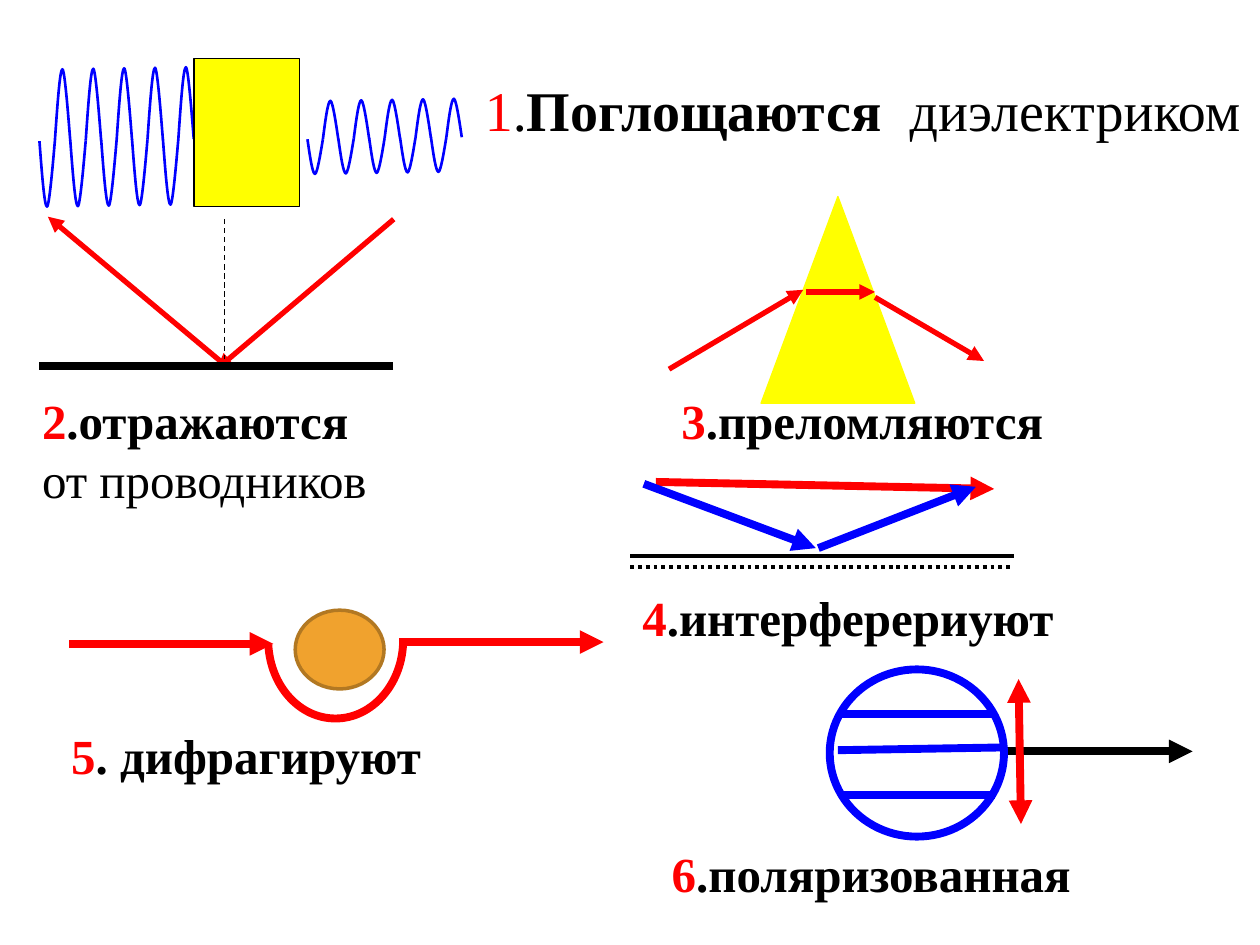
from dataclasses import dataclass

from lxml import etree
from pptx import Presentation
from pptx import util as u
from pptx.dml.color import RGBColor
from pptx.enum import dml, shapes, text
from pptx.oxml.ns import qn

# The slide is a grid of 100 columns by 75 rows; all places are (column, row).
COLUMNS, ROWS = 100, 75
WIDTH, HEIGHT = u.Inches(10), u.Inches(7.5)

RED = RGBColor(0xFF, 0x00, 0x00)
BLUE = RGBColor(0x00, 0x00, 0xFF)
BLACK = RGBColor(0x00, 0x00, 0x00)
YELLOW = RGBColor(0xFF, 0xFF, 0x00)
ORANGE = RGBColor(0xF0, 0xA2, 0x2E)
BROWN = RGBColor(0xB2, 0x78, 0x22)
FONT = "Times New Roman"

Point = tuple[float, float]


@dataclass(frozen=True)
class Ray:
    start: Point
    end: Point
    color: RGBColor = RED
    weight: float = 4.5
    arrows: tuple[str, ...] = ()
    dash: dml.MSO_LINE | None = None


@dataclass(frozen=True)
class Body:
    kind: shapes.MSO_SHAPE
    corner: Point
    size: Point
    fill: RGBColor | None
    outline: RGBColor
    weight: float


@dataclass(frozen=True)
class Caption:
    number: str
    lines: tuple[tuple[tuple[str, bool], ...], ...]
    corner: Point
    size: Point
    points: int = 28
    bold_number: bool = True


@dataclass(frozen=True)
class Wave:
    start: Point
    crest: float
    trough: float
    periods: int = 5


HEAD, TAIL = ("headEnd",), ("tailEnd",)

WAVES = [Wave((3.13, 11.2), 5.7, 5.2), Wave((24.4, 11.05), 3.05, 2.75)]
PERIOD, DRIFT = 2.45, -0.04
ABSORBER = Body(shapes.MSO_SHAPE.RECTANGLE, (15.4, 4.67), (8.35, 11.7), YELLOW, BLACK, 0.75)
REFLECTION = [
    Ray((31.25, 17.4), (17.2, 29.3), weight=3, arrows=TAIL),
    Ray((17.8, 17.4), (17.8, 28.5), BLACK, 0.75, dash=dml.MSO_LINE.DASH),
    Ray((3.8, 17.2), (17.9, 29), weight=3, arrows=HEAD),
    Ray((31.2, 29.04), (3.13, 29.04), BLACK),
]
PRISM = Body(shapes.MSO_SHAPE.ISOSCELES_TRIANGLE, (60.4, 15.6), (12.2, 16.4),
             YELLOW, YELLOW, 0.75)
REFRACTION = [
    Ray((53.1, 29.3), (63.75, 23), weight=3, arrows=TAIL),
    Ray((63.94, 23.17), (69.45, 23.17), weight=3, arrows=TAIL),
    Ray((69.45, 23.6), (78.1, 28.65), weight=3, arrows=TAIL),
]
DIRECT_RAY = Ray((52.05, 38.25), (78.9, 38.8), arrows=TAIL)
REFLECTED_RAYS = [
    Ray((51.1, 38.4), (64.75, 43.5), BLUE, arrows=TAIL),
    Ray((64.95, 43.5), (77.45, 38.64), BLUE, arrows=TAIL),
]
MIRROR = [
    Ray((50, 44.13), (80.5, 44.13), BLACK, 2.25),
    Ray((50, 45), (80.45, 45), BLACK, 2.25, dash=dml.MSO_LINE.ROUND_DOT),
]
DIFFRACTION = [
    Ray((5.5, 51.1), (21.7, 51.1), arrows=TAIL),
    Ray((31.7, 50.96), (47.9, 50.96), arrows=TAIL),
]
BEND = [(21.3, 51.2), (21.5, 54.5), (23.8, 57.03), (26.63, 57.03),
        (29.6, 57.03), (32, 54.2), (32, 50.8)]
OBSTACLE = Body(shapes.MSO_SHAPE.OVAL, (23.43, 48.43), (7.05, 6.25), ORANGE, BROWN, 2)
POLARIZATION = [
    Ray((79.7, 59.63), (94.65, 59.63), BLACK, arrows=TAIL),
    Ray((80.84, 53.9), (81.03, 65.4), arrows=HEAD + TAIL),
]
POLARIZER = Body(shapes.MSO_SHAPE.OVAL, (65.85, 53.13), (13.83, 13.27), None, BLUE, 4.5)
SLITS = [
    Ray((66.5, 56.7), (78.8, 56.7), BLUE),
    Ray((66.8, 63.1), (79, 63.1), BLUE),
    Ray((66.5, 59.54), (79.7, 59.32), BLUE),
]
ABSORBED = Caption("1", (((".", False), ("Поглощаются", True), ("  диэлектриком", False)),),
                   (37.5, 5.45), (62.5, 6.4), 32, False)
REFLECTED = Caption("2", (((".отражаются", True),), (("от проводников", False),)),
                    (2.35, 30.5), (28.1, 10.4))
REFRACTED = Caption("3", (((".преломляются", True),),), (53.1, 30.5), (31, 5.7))
INTERFERING = Caption("4", (((".интерферериуют", True),),), (50, 46.1), (35, 5.7))
DIFFRACTED = Caption("5", (((". дифрагируют", True),),), (4.67, 57.05), (30.1, 5.7))
POLARIZED = Caption("6", (((".поляризованная", True),),), (52.33, 66.4), (34, 5.7))

# From back to front
SCENE = [
    *WAVES, ABSORBER, ABSORBED, *REFLECTION, PRISM, *REFRACTION, REFLECTED, REFRACTED,
    DIRECT_RAY, *REFLECTED_RAYS, INTERFERING, *MIRROR, *DIFFRACTION, BEND, OBSTACLE,
    DIFFRACTED, *POLARIZATION, POLARIZER, *SLITS, POLARIZED,
]


def emu(point: Point) -> tuple[int, int]:
    return round(point[0] * WIDTH / COLUMNS), round(point[1] * HEIGHT / ROWS)


def draw_ray(slide, ray: Ray) -> None:
    line = slide.shapes.add_connector(
        shapes.MSO_CONNECTOR.STRAIGHT, *emu(ray.start), *emu(ray.end))
    line.line.color.rgb = ray.color
    line.line.width = u.Pt(ray.weight)
    if ray.dash is not None:
        line.line.dash_style = ray.dash
    properties = line._element.spPr
    for end in ray.arrows:
        etree.SubElement(properties.find(qn("a:ln")), qn(f"a:{end}"), type="triangle")
    etree.SubElement(properties, qn("a:effectLst"))


def draw_body(slide, body: Body) -> None:
    shape = slide.shapes.add_shape(body.kind, *emu(body.corner), *emu(body.size))
    shape.shadow.inherit = False
    if body.fill is None:
        shape.fill.background()
    else:
        shape.fill.solid()
        shape.fill.fore_color.rgb = body.fill
    shape.line.color.rgb = body.outline
    shape.line.width = u.Pt(body.weight)


def draw_curve(slide, points: list[Point], color: RGBColor = RED,
               weight: float = 4.5) -> None:
    """Draw an open Bezier chain: a start, then two controls and an end per arc."""
    builder = slide.shapes.build_freeform(*emu(points[0]))
    builder.add_line_segments([emu(point) for point in points[1:]], close=False)
    curve = builder.convert_to_shape()
    segments = list(curve._element.iter(qn("a:lnTo")))
    for first in range(0, len(segments), 3):
        arc = segments[first]
        arc.tag = qn("a:cubicBezTo")
        for segment in segments[first + 1:first + 3]:
            arc.append(segment[0])
            segment.getparent().remove(segment)
    curve.shadow.inherit = False
    curve.fill.background()
    curve.line.color.rgb = color
    curve.line.width = u.Pt(weight)


def draw_wave(slide, wave: Wave) -> None:
    """Draw each period as a trough and a crest."""
    for period in range(wave.periods):
        for offset, height in ((PERIOD / 2, -wave.crest), (0, wave.trough)):
            x = wave.start[0] + period * PERIOD + offset
            y = wave.start[1] + period * DRIFT
            shares = ((0, 0), (0.2, 0.5), (0.4, 1), (0.6, 1),
                      (0.8, 1), (1.15, 0.16), (PERIOD / 2, 0))
            draw_curve(slide, [(x + dx, y + share * height) for dx, share in shares],
                       BLUE, 1.5)


def write_caption(slide, caption: Caption) -> None:
    frame = slide.shapes.add_textbox(*emu(caption.corner), *emu(caption.size)).text_frame
    frame.word_wrap = False
    frame.auto_size = text.MSO_AUTO_SIZE.SHAPE_TO_FIT_TEXT
    frame.vertical_anchor = text.MSO_ANCHOR.MIDDLE
    for index, line in enumerate(caption.lines):
        paragraph = frame.add_paragraph() if index else frame.paragraphs[0]
        paragraph.font.name = FONT
        paragraph.font.size = u.Pt(caption.points)
        pieces = [(words, bold, BLACK) for words, bold in line]
        if index == 0:
            pieces.insert(0, (caption.number, caption.bold_number, RED))
        for words, bold, color in pieces:
            run = paragraph.add_run()
            run.text = words
            run.font.bold = bold
            run.font.color.rgb = color


DRAWERS = {Ray: draw_ray, Body: draw_body, Wave: draw_wave,
           Caption: write_caption, list: draw_curve}


def main() -> None:
    deck = Presentation()
    deck.slide_width, deck.slide_height = WIDTH, HEIGHT
    slide = deck.slides.add_slide(deck.slide_layouts[6])
    for part in SCENE:
        DRAWERS[type(part)](slide, part)
    deck.save("out.pptx")


if __name__ == "__main__":
    main()
